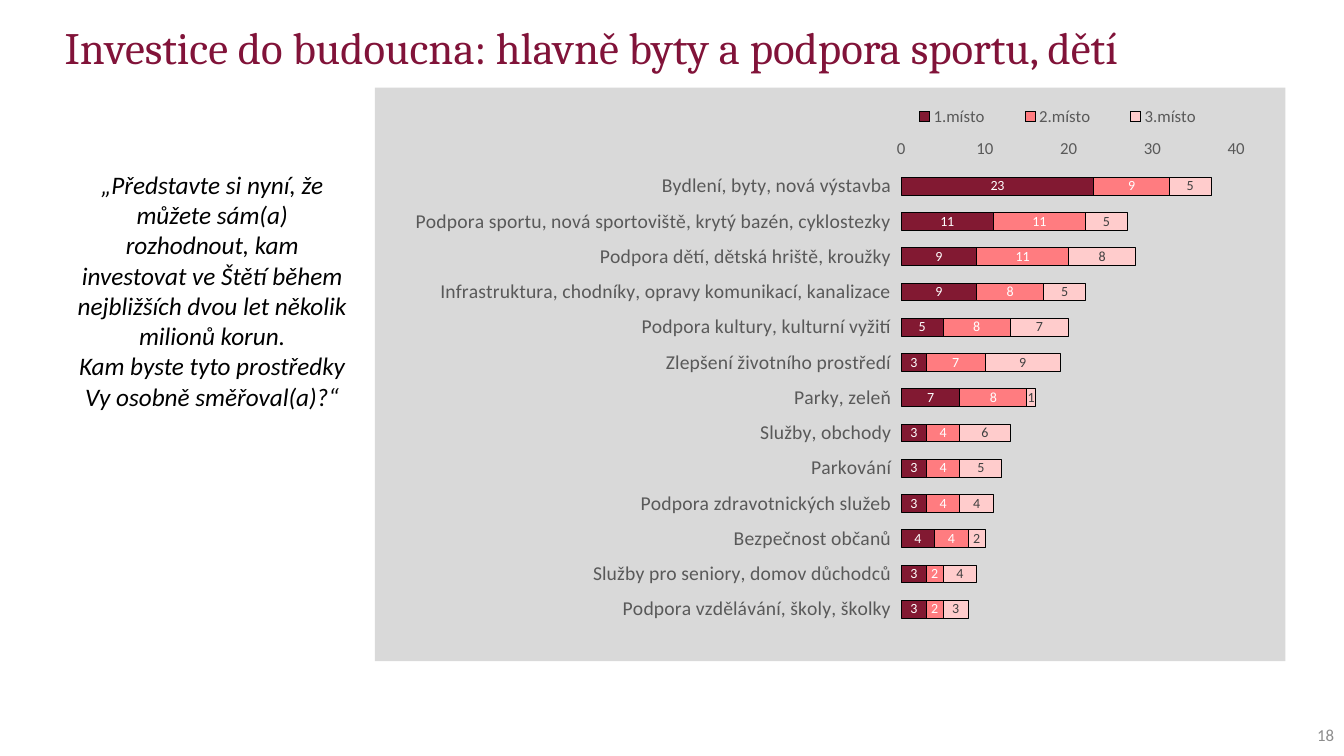
from dataclasses import dataclass

import pptx
import pptx.chart.chart
import pptx.chart.data
import pptx.dml.color
import pptx.dml.fill
import pptx.enum.chart
import pptx.enum.text
import pptx.oxml
import pptx.oxml.ns
import pptx.slide
import pptx.text.text
import pptx.util
from lxml import etree

SLIDE_WIDTH = pptx.util.Inches(13.33)
SLIDE_HEIGHT = pptx.util.Inches(7.5)
COLUMNS, ROWS = 100, 60
ALIGN = pptx.enum.text.PP_ALIGN


@dataclass(frozen=True)
class Theme:
    heading_font: str = "Cambria"
    body_font: str = "Calibri"
    heading: str = "811339"
    ink: str = "000000"
    axis: str = "595959"
    page: str = "8C8C8C"
    panel: str = "D9D9D9"
    title_size: float = 32
    question_size: float = 18
    category_size: float = 14
    small_size: float = 12
    label_size: float = 10


@dataclass(frozen=True)
class Area:
    """A place on the slide grid, in columns and rows."""
    column: float
    row: float
    columns: float
    rows: float

    def box(self) -> tuple[int, int, int, int]:
        across, down = SLIDE_WIDTH / COLUMNS, SLIDE_HEIGHT / ROWS
        return (round(self.column * across), round(self.row * down),
                round(self.columns * across), round(self.rows * down))


@dataclass(frozen=True)
class Rank:
    name: str
    fill: str
    label: str
    number_format: str


@dataclass(frozen=True)
class Investment:
    name: str
    shares: tuple[int, int, int]


THEME = Theme()
TITLE = Area(4.8, 2.08, 89.42, 8.56)
PAGE = Area(95.65, 56.72, 4.35, 3.2)
CHART = Area(27.9, 6.96, 67.74, 45.52)
QUESTION = Area(4.8, 13.04, 21.98, 20.16)

RANKS = [
    Rank("1.místo", "821932", "FFFFFF", "0"),
    Rank("2.místo", "FF7C80", "FFFFFF", "#,##0"),
    Rank("3.místo", "FFCCCC", "404040", "#,##0"),
]
INVESTMENTS = [
    Investment("Bydlení, byty, nová výstavba", (23, 9, 5)),
    Investment("Podpora sportu, nová sportoviště, krytý bazén, cyklostezky", (11, 11, 5)),
    Investment("Podpora dětí, dětská hriště, kroužky", (9, 11, 8)),
    Investment("Infrastruktura, chodníky, opravy komunikací, kanalizace", (9, 8, 5)),
    Investment("Podpora kultury, kulturní vyžití", (5, 8, 7)),
    Investment("Zlepšení životního prostředí", (3, 7, 9)),
    Investment("Parky, zeleň", (7, 8, 1)),
    Investment("Služby, obchody", (3, 4, 6)),
    Investment("Parkování", (3, 4, 5)),
    Investment("Podpora zdravotnických služeb", (3, 4, 4)),
    Investment("Bezpečnost občanů", (4, 4, 2)),
    Investment("Služby pro seniory, domov důchodců", (3, 2, 4)),
    Investment("Podpora vzdělávání, školy, školky", (3, 2, 3)),
]
QUESTION_TEXT = [
    "„Představte si nyní, že můžete sám(a) rozhodnout, kam investovat ve Štětí "
    "během nejbližších dvou let několik milionů korun.",
    "Kam byste tyto prostředky Vy osobně směřoval(a)?“",
]


def rgb(colour: str) -> pptx.dml.color.RGBColor:
    return pptx.dml.color.RGBColor.from_string(colour)


def style_font(font: pptx.text.text.Font, size: float, colour: str,
               name: str = THEME.body_font) -> None:
    font.name, font.size = name, pptx.util.Pt(size)
    font.bold = False
    font.color.rgb = rgb(colour)


def fill_solid(fill: pptx.dml.fill.FillFormat, colour: str) -> None:
    fill.solid()
    fill.fore_color.rgb = rgb(colour)


def add_text(slide: pptx.slide.Slide, area: Area, lines: list[str], size: float,
             colour: str, align: ALIGN, italic: bool = False) -> pptx.text.text.TextFrame:
    frame = slide.shapes.add_textbox(*area.box()).text_frame
    frame.word_wrap = True
    frame.text = "\n".join(lines)
    for paragraph in frame.paragraphs:
        paragraph.alignment = align
        style_font(paragraph.font, size, colour)
        paragraph.font.italic = italic
    return frame


def set_layout(element: etree.ElementBase, following: str, x: float, y: float,
               w: float, h: float, inner: bool = False) -> None:
    """Place a chart part, in shares of the chart's size."""
    target = '<c:layoutTarget val="inner"/>' if inner else ""
    places = "".join(f'<c:{key}Mode val="edge"/>' for key in "xy")
    places += "".join(f'<c:{key} val="{share}"/>' for key, share in zip("xywh", (x, y, w, h)))
    layout = pptx.oxml.parse_xml(
        f'<c:layout {pptx.oxml.ns.nsdecls("c")}><c:manualLayout>'
        f'{target}{places}</c:manualLayout></c:layout>')
    for old in element.findall(pptx.oxml.ns.qn("c:layout")):
        element.remove(old)
    element.find(pptx.oxml.ns.qn(following)).addprevious(layout)


def format_axes(chart: pptx.chart.chart.Chart) -> None:
    tick = pptx.enum.chart.XL_TICK_MARK
    categories, values = chart.category_axis, chart.value_axis
    categories.reverse_order = True
    for axis, size in ((categories, THEME.category_size), (values, THEME.small_size)):
        axis.major_tick_mark, axis.minor_tick_mark = tick.OUTSIDE, tick.NONE
        style_font(axis.tick_labels.font, size, THEME.axis)
    values.minimum_scale, values.maximum_scale, values.major_unit = 0, 40, 10
    values.has_major_gridlines = True
    values.tick_labels.number_format = "0"
    values.tick_labels.number_format_is_linked = False
    values.format.line.fill.background()
    for line in (categories.format.line, values.major_gridlines.format.line):
        fill_solid(line.fill, THEME.panel)
        line.width = pptx.util.Pt(0.75)


def add_investment_chart(slide: pptx.slide.Slide) -> None:
    data = pptx.chart.data.CategoryChartData()
    data.categories = [investment.name for investment in INVESTMENTS]
    for place, rank in enumerate(RANKS):
        data.add_series(rank.name, [investment.shares[place] for investment in INVESTMENTS])
    chart = slide.shapes.add_chart(
        pptx.enum.chart.XL_CHART_TYPE.BAR_STACKED, *CHART.box(), data).chart
    style_font(chart.font, THEME.label_size, THEME.ink)
    chart.has_title = False
    format_axes(chart)

    # Bars and their values
    plot = chart.plots[0]
    plot.gap_width, plot.overlap, plot.vary_by_categories = 100, 100, False
    for series, rank in zip(plot.series, RANKS):
        fill_solid(series.format.fill, rank.fill)
        fill_solid(series.format.line.fill, THEME.ink)
        series.format.line.width = pptx.util.Pt(0.5)
        labels = series.data_labels
        labels.show_value = True
        labels.number_format, labels.number_format_is_linked = rank.number_format, False
        style_font(labels.font, THEME.label_size, rank.label)

    # Legend, plot area and grey panel
    chart.has_legend = True
    legend = chart.legend
    legend.position = pptx.enum.chart.XL_LEGEND_POSITION.TOP
    legend.include_in_layout = False
    style_font(legend.font, THEME.small_size, THEME.axis)
    space = chart.element
    set_layout(space.find(".//" + pptx.oxml.ns.qn("c:legend")), "c:overlay",
               0.56, 0.02, 0.38, 0.06)
    set_layout(space.find(".//" + pptx.oxml.ns.qn("c:plotArea")), "c:barChart",
               0.578, 0.141, 0.368, 0.799, inner=True)
    panel = pptx.oxml.parse_xml(
        f'<c:spPr {pptx.oxml.ns.nsdecls("c", "a")}><a:solidFill><a:srgbClr val="{THEME.panel}"/>'
        '</a:solidFill><a:ln><a:noFill/></a:ln></c:spPr>')
    space.find(pptx.oxml.ns.qn("c:txPr")).addprevious(panel)


def add_title(slide: pptx.slide.Slide, text: str) -> None:
    title = slide.shapes.title
    title.left, title.top, title.width, title.height = TITLE.box()
    frame = title.text_frame
    frame.text = text
    frame.auto_size = pptx.enum.text.MSO_AUTO_SIZE.NONE
    frame.vertical_anchor = pptx.enum.text.MSO_ANCHOR.TOP
    frame.margin_left = frame.margin_top = frame.margin_right = frame.margin_bottom = 0
    heading = frame.paragraphs[0]
    heading.alignment, heading.line_spacing = ALIGN.LEFT, 0.9
    style_font(heading.font, THEME.title_size, THEME.heading, THEME.heading_font)


def main() -> None:
    deck = pptx.Presentation()
    deck.slide_width, deck.slide_height = SLIDE_WIDTH, SLIDE_HEIGHT
    slide = deck.slides.add_slide(deck.slide_layouts.get_by_name("Title Only"))
    add_title(slide, "Investice do budoucna: hlavně byty a podpora sportu, dětí")
    page = add_text(slide, PAGE, ["18"], THEME.small_size, THEME.page, ALIGN.RIGHT)
    page.vertical_anchor = pptx.enum.text.MSO_ANCHOR.MIDDLE
    add_investment_chart(slide)
    question = add_text(slide, QUESTION, QUESTION_TEXT, THEME.question_size, THEME.ink,
                        ALIGN.CENTER, italic=True)
    question.auto_size = pptx.enum.text.MSO_AUTO_SIZE.SHAPE_TO_FIT_TEXT
    deck.save("out.pptx")


if __name__ == "__main__":
    main()
